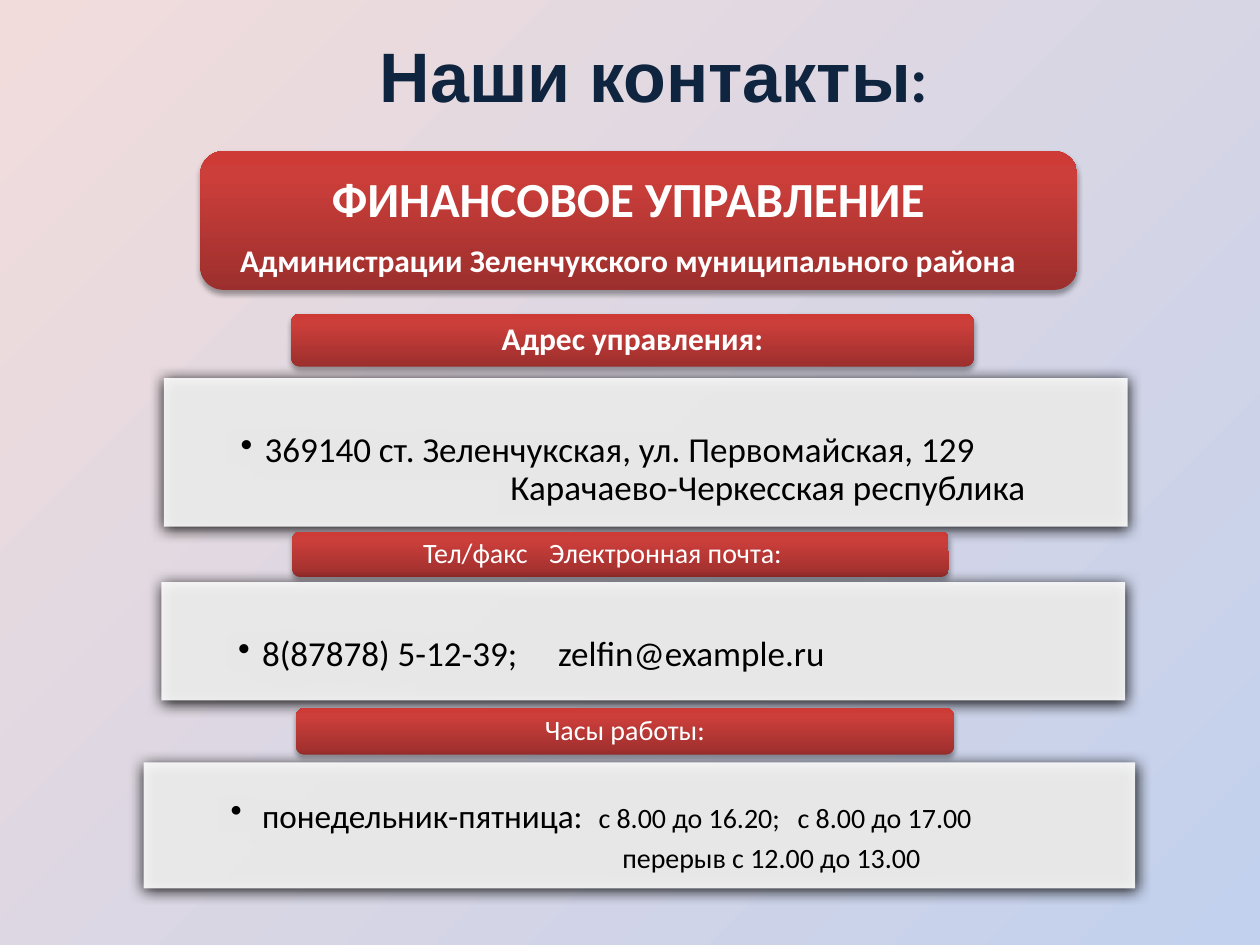
from pptx import Presentation
from pptx.dml.color import RGBColor
from pptx.enum.shapes import MSO_SHAPE
from pptx.enum.text import MSO_ANCHOR, PP_ALIGN
from pptx.oxml import parse_xml
from pptx.oxml.ns import nsdecls, qn
from pptx.util import Inches, Pt
from lxml.etree import SubElement

WIDTH, HEIGHT = Inches(10), Inches(7.5)
NAVY, WHITE, BLACK = "0F243E", "FFFFFF", "000000"
RED_STOPS = [(0, "9C2F2D"), (80, "CB3E3A"), (100, "CE3B37")]
BACKGROUND_STOPS = [(0, "F2DCDB"), (100, "C2D1ED")]
BANNER_SHADOW = {"alpha": 35, "blur": 3.1, "distance": 1.8}
PANEL_SHADOW = {"alpha": 100, "blur": 8.5, "distance": 1}


def color(value):
    """Turn a hex string into a colour."""
    return RGBColor.from_string(value)


def across(percent):
    """Return a share of the slide width."""
    return int(WIDTH * percent / 100)


def down(percent):
    """Return a share of the slide height."""
    return int(HEIGHT * percent / 100)


def apply(target, values):
    """Set every attribute given in a dict of format values."""
    for name, value in values.items():
        setattr(target, name, value)


def paint_gradient(fill, stops, angle):
    """Fill with a linear gradient through the given stops."""
    fill.gradient()
    fill.gradient_angle = angle
    stop_list = fill._fill._gradFill.find(qn("a:gsLst"))
    for stop in list(stop_list):
        stop_list.remove(stop)
    for position, value in stops:
        stop = SubElement(stop_list, qn("a:gs"), pos=str(position * 1000))
        SubElement(stop, qn("a:srgbClr"), val=value)


def cast_shadow(shape, alpha, blur, distance):
    """Give a shape a soft black shadow below it."""
    shape.shadow.inherit = False
    effects = shape._element.spPr.find(qn("a:effectLst"))
    effects.append(parse_xml(
        f'<a:outerShdw {nsdecls("a")} blurRad="{Pt(blur)}" dist="{Pt(distance)}" '
        f'dir="5400000" rotWithShape="0"><a:srgbClr val="{BLACK}">'
        f'<a:alpha val="{alpha * 1000}"/></a:srgbClr></a:outerShdw>'))


def add_block(slide, kind, box, insets, anchor):
    """Place a borderless shape and set up its text frame."""
    left, top, width, height = box
    block = slide.shapes.add_shape(kind, across(left), down(top), across(width), down(height))
    block.line.fill.background()
    inset_left, inset_top, inset_right, inset_bottom = insets
    apply(block.text_frame, {
        "margin_left": across(inset_left), "margin_top": down(inset_top),
        "margin_right": across(inset_right), "margin_bottom": down(inset_bottom),
        "vertical_anchor": anchor, "word_wrap": True})
    return block


def write_line(frame, runs, hue, align=PP_ALIGN.LEFT, spacing=0.9, after=0,
               bold=False, margin=0, bullet=False, tabs=()):
    """Write one paragraph of (text, size) runs into a text frame."""
    first = frame.paragraphs[0]
    line = first if not first.runs else frame.add_paragraph()
    apply(line, {"alignment": align, "line_spacing": spacing,
                 "space_after": Pt(round(runs[0][1] * after))})
    for text, size in runs:
        run = line.add_run()
        run.text = text
        apply(run.font, {"name": "Calibri", "size": Pt(size), "bold": bold})
        run.font.color.rgb = color(hue)
    properties = line._p.get_or_add_pPr()
    properties.set("marL", str(across(margin)))
    properties.set("indent", str(-across(margin) if bullet else 0))
    if bullet:
        SubElement(properties, qn("a:buChar"), char="•")
    if tabs:
        stops = SubElement(properties, qn("a:tabLst"))
        for position in tabs:
            SubElement(stops, qn("a:tab"), pos=str(across(position)), algn="l")


def add_title(slide, box):
    """Place the slide heading."""
    left, top, width, height = box
    heading = slide.shapes.add_textbox(across(left), down(top), across(width), down(height))
    apply(heading.text_frame, {"word_wrap": True, "vertical_anchor": MSO_ANCHOR.MIDDLE})
    line = heading.text_frame.paragraphs[0]
    line.alignment = PP_ALIGN.CENTER
    for text, size, font in [("Наши контакты", 40, "Arial"), (":", 36, "Calibri")]:
        run = line.add_run()
        run.text = text
        apply(run.font, {"name": font, "size": Pt(size), "bold": True})
        run.font.color.rgb = color(NAVY)


def add_banner(slide, box, lines, insets=(2.1, 0, 2.1, 0), **layout):
    """Place a red rounded banner with its caption lines."""
    banner = add_block(slide, MSO_SHAPE.ROUNDED_RECTANGLE, box, insets, MSO_ANCHOR.MIDDLE)
    paint_gradient(banner.fill, RED_STOPS, 90)
    cast_shadow(banner, **BANNER_SHADOW)
    style = {"align": PP_ALIGN.CENTER, "after": 0.35, **layout}
    for text, size in lines:
        write_line(banner.text_frame, [(text, size)], WHITE, **style)


def add_panel(slide, box, lines, insets=(6.1, 5.73, 6.1, 2)):
    """Place a white panel with its detail lines."""
    panel = add_block(slide, MSO_SHAPE.RECTANGLE, box, insets, MSO_ANCHOR.TOP)
    panel.fill.solid()
    panel.fill.fore_color.rgb = color(WHITE)
    hue = panel._element.spPr.find(qn("a:solidFill")).find(qn("a:srgbClr"))
    SubElement(hue, qn("a:alpha"), val="90000")
    cast_shadow(panel, **PANEL_SHADOW)
    for line in lines:
        write_line(panel.text_frame, hue=BLACK, **line)


def build_contacts(slide):
    """Fill the contacts slide from top to bottom."""
    paint_gradient(slide.background.fill, BACKGROUND_STOPS, 315)
    add_title(slide, (11.3, 2.8, 81.2, 10.27))
    add_banner(slide, (15.9, 16, 69.6, 14.67), [
        ("ФИНАНСОВОЕ УПРАВЛЕНИЕ", 28),
        ("Администрации Зеленчукского муниципального района", 18),
    ], insets=(2.1, 1.47, 3.8, 0), bold=True)
    add_banner(slide, (23.1, 33.2, 54.2, 5.6), [("Адрес управления:", 18)], bold=True)
    add_panel(slide, (13, 40, 76.5, 15.73), [
        {"runs": [("369140 ст. Зеленчукская, ул. Первомайская, 129", 20)],
         "margin": 1.9, "bullet": True},
        {"runs": [("Карачаево-Черкесская республика", 20)], "margin": 21.4},
    ])
    add_banner(slide, (23.2, 56.27, 52.1, 4.8), [("Тел/факс\tЭлектронная почта:", 16)],
               insets=(10.2, 0, 2.1, 0), align=PP_ALIGN.LEFT, tabs=[14.3])
    add_panel(slide, (12.8, 61.6, 76.5, 12.53), [
        {"runs": [("8(87878) 5-12-39;\tzelfin@example.ru", 20)],
         "margin": 1.9, "bullet": True, "tabs": [25.4]},
    ])
    add_banner(slide, (23.5, 74.93, 52.2, 4.93), [("Часы работы:", 16)])
    add_panel(slide, (11.4, 80.67, 78.7, 13.33), [
        {"runs": [("понедельник-пятница:", 19), ("\tс 8.00 до 16.20;\tс 8.00 до 17.00", 16)],
         "margin": 2.5, "bullet": True, "tabs": [29.2, 45], "spacing": 1.0, "after": 0.15},
        {"runs": [("перерыв с 12.00 до 13.00", 16)], "margin": 31.1, "spacing": 1.0},
    ], insets=(6.9, 3.47, 4, 1))


def main():
    """Create and save the presentation."""
    deck = Presentation()
    apply(deck, {"slide_width": WIDTH, "slide_height": HEIGHT})
    build_contacts(deck.slides.add_slide(deck.slide_layouts[6]))
    deck.save("out.pptx")


if __name__ == "__main__":
    main()
